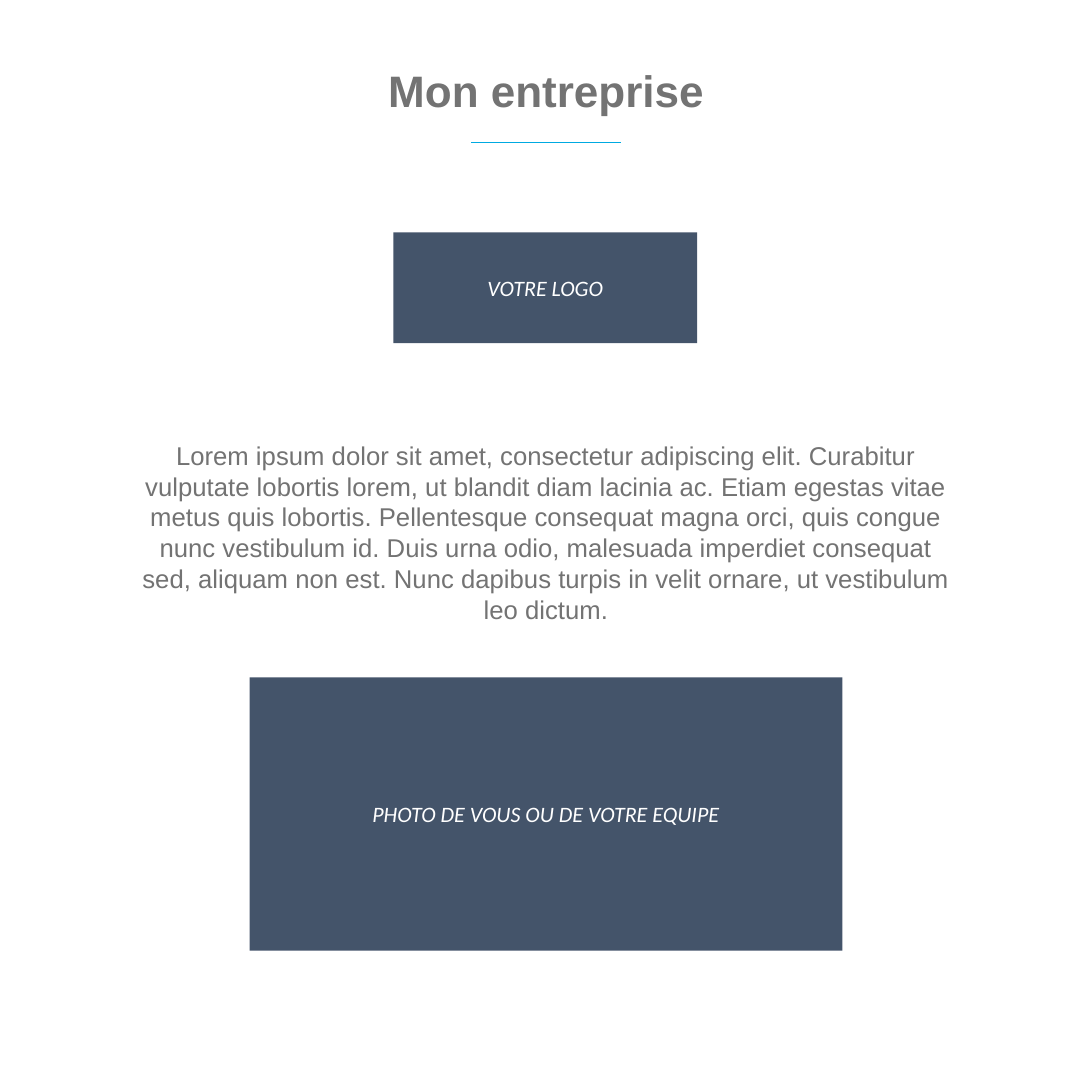
"""Build the company presentation slide."""
from lxml.etree import SubElement
from pptx import Presentation
from pptx.dml.color import RGBColor
from pptx.enum.shapes import MSO_CONNECTOR as Connector, MSO_SHAPE as Shape
from pptx.enum.text import MSO_ANCHOR as Anchor, PP_ALIGN as Align
from pptx.oxml.ns import qn
from pptx.util import Inches, Pt

SIDE = 8.27
COLORS = {"text": "737373", "accent": "00AAE1", "panel": "44546A", "white": "FFFFFF"}
PRESENTATION = (
    "Lorem ipsum dolor sit amet, consectetur adipiscing elit. Curabitur vulputate "
    "lobortis lorem, ut blandit diam lacinia ac. Etiam egestas vitae metus quis "
    "lobortis. Pellentesque consequat magna orci, quis congue nunc vestibulum id. "
    "Duis urna odio, malesuada imperdiet consequat sed, aliquam non est. Nunc "
    "dapibus turpis in velit ornare, ut vestibulum leo dictum."
)


def color(name):
    """Return the palette colour with this name."""
    return RGBColor.from_string(COLORS[name])


def write(holder, text, size, font="Arial", ink="text", bold=False, italic=False,
          anchor=Anchor.MIDDLE):
    """Write centred, wrapped text in a shape or text box."""
    frame = holder.text_frame
    frame.word_wrap = True
    frame.vertical_anchor = anchor
    paragraph = frame.paragraphs[0]
    paragraph.alignment = Align.CENTER
    run = paragraph.add_run()
    run.text = text
    run.font.name = font
    run.font.size = Pt(size)
    run.font.bold = bold
    run.font.italic = italic
    run.font.color.rgb = color(ink)


def add_text(slide, text, left, top, width, height, **style):
    """Add a text box."""
    box = slide.shapes.add_textbox(*map(Inches, (left, top, width, height)))
    write(box, text, **style)


def add_panel(slide, label, left, top, width, height):
    """Add a filled panel that reserves room for an image."""
    panel = slide.shapes.add_shape(Shape.RECTANGLE, *map(Inches, (left, top, width, height)))
    panel.shadow.inherit = False
    panel.fill.solid()
    panel.fill.fore_color.rgb = color("panel")
    panel.line.fill.background()
    write(panel, label, size=12, font="Calibri", ink="white", italic=True)


def add_rule(slide, left, right, y):
    """Add a thin horizontal accent line."""
    rule = slide.shapes.add_connector(Connector.STRAIGHT, *map(Inches, (left, y, right, y)))
    rule.line.color.rgb = color("accent")
    rule.line.width = Pt(0.5)
    SubElement(rule._element.spPr, qn("a:effectLst"))


def main():
    """Build and save the slide."""
    deck = Presentation()
    deck.slide_width = deck.slide_height = Inches(SIDE)
    slide = deck.slides.add_slide(deck.slide_layouts[6])
    add_text(slide, "Mon entreprise", 0, 0.43, SIDE, 0.5, size=24, bold=True)
    add_rule(slide, 3.57, 4.7, 1.08)
    add_text(slide, PRESENTATION, 0.95, 3.28, 6.37, 1.51, size=14, anchor=Anchor.TOP)
    add_panel(slide, "VOTRE LOGO", 2.98, 1.76, 2.3, 0.84)
    add_panel(slide, "PHOTO DE VOUS OU DE VOTRE EQUIPE", 1.89, 5.13, 4.49, 2.07)
    deck.save("out.pptx")


if __name__ == "__main__":
    main()
